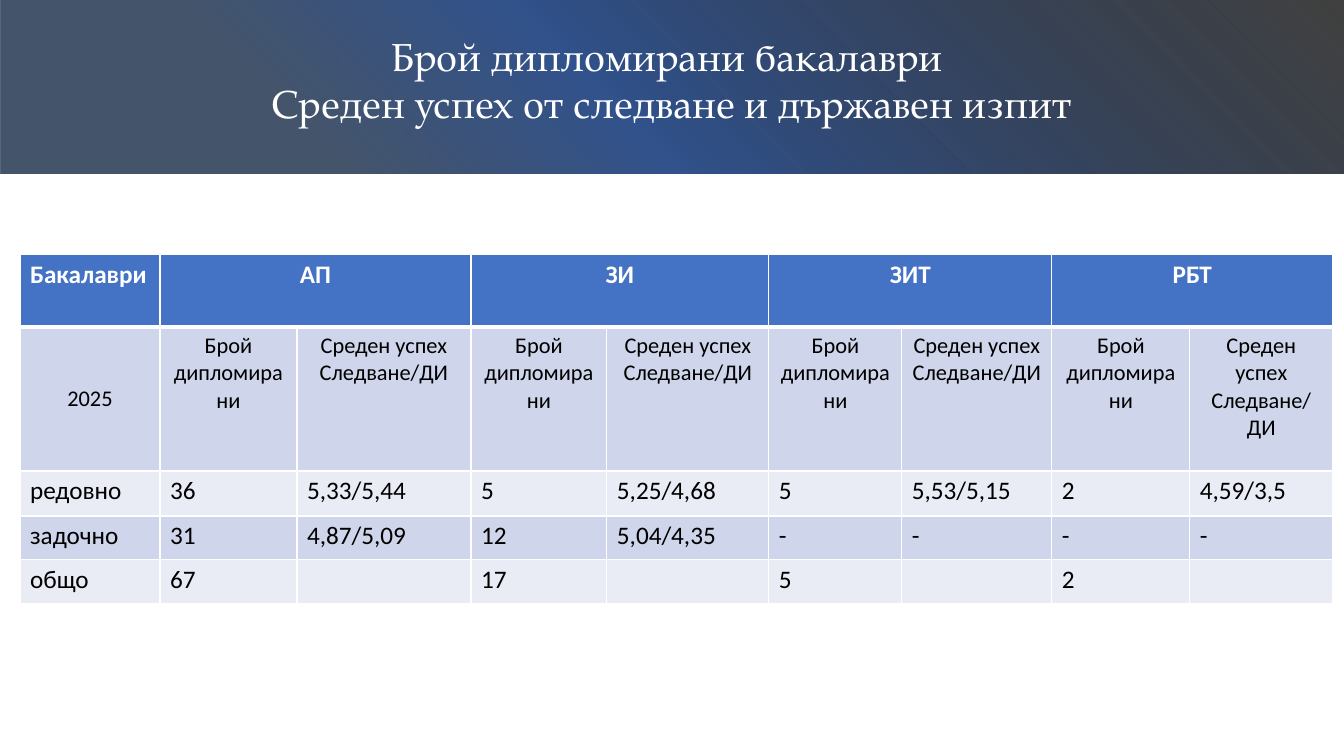
import pptx
import pptx.dml.color
import pptx.enum.shapes
import pptx.enum.text
import pptx.oxml
import pptx.oxml.ns
import pptx.util

PX = 914400 / 100.8
COLORS = {
    "white": "FFFFFF", "black": "000000", "slate": "44546A", "navy": "31528C",
    "header": "4472C4", "band_dark": "CFD5EA", "band_light": "E9EBF5",
}
CENTER = pptx.enum.text.PP_ALIGN.CENTER
LEFT = pptx.enum.text.PP_ALIGN.LEFT
MIDDLE = pptx.enum.text.MSO_ANCHOR.MIDDLE
TOP = pptx.enum.text.MSO_ANCHOR.TOP
NS = pptx.oxml.ns.nsdecls("a")


def px(n):
    return pptx.util.Emu(round(n * PX))


def rgb(name):
    return pptx.dml.color.RGBColor.from_string(COLORS[name])


class SlideBuilder:
    def __init__(self, slide):
        self.slide = slide

    def fill_text(self, tf, text, align, color, size, **fmt):
        """Fill a text frame, one paragraph per line of text."""
        for i, line in enumerate(text.split("\n")):
            p = tf.paragraphs[0] if i == 0 else tf.add_paragraph()
            p.alignment = align
            if not line:
                p.font.size = pptx.util.Pt(size)
                continue
            r = p.add_run()
            r.text = line
            r.font.color.rgb = rgb(color)
            for name, value in {"size": pptx.util.Pt(size), **fmt}.items():
                setattr(r.font, name, value)

    def gradient_rect(self, box, rotation, angle, stops):
        """Draw a rectangle; stops are (percent, color, opacity percent)."""
        sp = self.slide.shapes.add_shape(
            pptx.enum.shapes.MSO_SHAPE.RECTANGLE, *map(px, box))
        sp.rotation = rotation
        sp.shadow.inherit = False
        sp.line.fill.background()
        stop_xml = "".join(
            f'<a:gs pos="{pos * 1000}"><a:srgbClr val="{COLORS[color]}">'
            f'<a:alpha val="{alpha * 1000}"/></a:srgbClr></a:gs>'
            for pos, color, alpha in stops)
        fill = pptx.oxml.parse_xml(
            f'<a:gradFill {NS} rotWithShape="1"><a:gsLst>{stop_xml}</a:gsLst>'
            f'<a:lin ang="{angle * 60000}" scaled="0"/></a:gradFill>')
        sp._element.spPr.find(pptx.oxml.ns.qn("a:prstGeom")).addnext(fill)

    def text(self, box, text, **style):
        tf = self.slide.shapes.add_textbox(*map(px, box)).text_frame
        tf.word_wrap = True
        self.fill_text(tf, text, **style)

    def borders(self, cell, **widths):
        """Set white borders; widths are points for L, R, T and B."""
        tcPr = cell._tc.get_or_add_tcPr()
        for i, side in enumerate("LRTB"):
            tcPr.insert(i, pptx.oxml.parse_xml(
                f'<a:ln{side} {NS} w="{widths.get(side, 1) * 12700}"><a:solidFill>'
                f'<a:srgbClr val="{COLORS["white"]}"/></a:solidFill></a:ln{side}>'))

    def table(self, left, top, widths, heights, rows):
        table = self.slide.shapes.add_table(
            len(heights), len(widths), px(left), px(top),
            px(sum(widths)), px(sum(heights))).table
        for column, width in zip(table.columns, widths):
            column.width = px(width)
        for row, height in zip(table.rows, heights):
            row.height = px(height)
        for i, texts in enumerate(rows):
            head, sub = i == 0, i == 1
            fill = "header" if head else "band_dark" if i % 2 else "band_light"
            edges = {"B": 3} if head else {"T": 3} if sub else {}
            for j, text in enumerate(texts):
                cell = table.cell(i, j)
                cell.fill.solid()
                cell.fill.fore_color.rgb = rgb(fill)
                cell.vertical_anchor = MIDDLE if sub and j == 0 else TOP
                self.borders(cell, **edges)
                self.fill_text(cell.text_frame, text,
                               align=CENTER if sub or (head and j) else LEFT,
                               color="white" if head else "black",
                               size=16 if sub else 18, name="Calibri", bold=head)
        for j in range(1, len(widths), 2):
            table.cell(0, j).merge(table.cell(0, j + 1))


def main():
    prs = pptx.Presentation()
    prs.slide_width, prs.slide_height = px(1344), px(756)
    s = SlideBuilder(prs.slides.add_slide(prs.slide_layouts[6]))

    s.gradient_rect((585, -585, 174, 1344), rotation=90, angle=225, stops=[
        (23, "slate", 100), (45, "navy", 100), (99, "black", 74)])
    s.text((68, 27, 1208, 105),
           "Брой дипломирани бакалаври \nСреден успех от следване и държавен изпит",
           align=CENTER, color="white", size=28, name="TeX Gyre Pagella")

    programmes = ["АП", "ЗИ", "ЗИТ", "РБТ"]
    measures = ["Брой дипломирани", "Среден успех\nСледване/ДИ"]
    header = ["Бакалаври"]
    for programme in programmes:
        header += [programme, ""]
    s.table(20, 254, widths=[140, 137, 174, 136, 162, 133, 150, 138, 143],
            heights=[73, 144, 45, 44, 44], rows=[
                header,
                ["2025"] + measures * len(programmes),
                ["редовно", "36", "5,33/5,44", "5", "5,25/4,68",
                 "5", "5,53/5,15", "2", "4,59/3,5"],
                ["задочно", "31", "4,87/5,09", "12", "5,04/4,35",
                 "-", "-", "-", "-"],
                ["общо", "67", "", "17", "", "5", "", "2", ""],
            ])
    prs.save("out.pptx")


if __name__ == "__main__":
    main()
